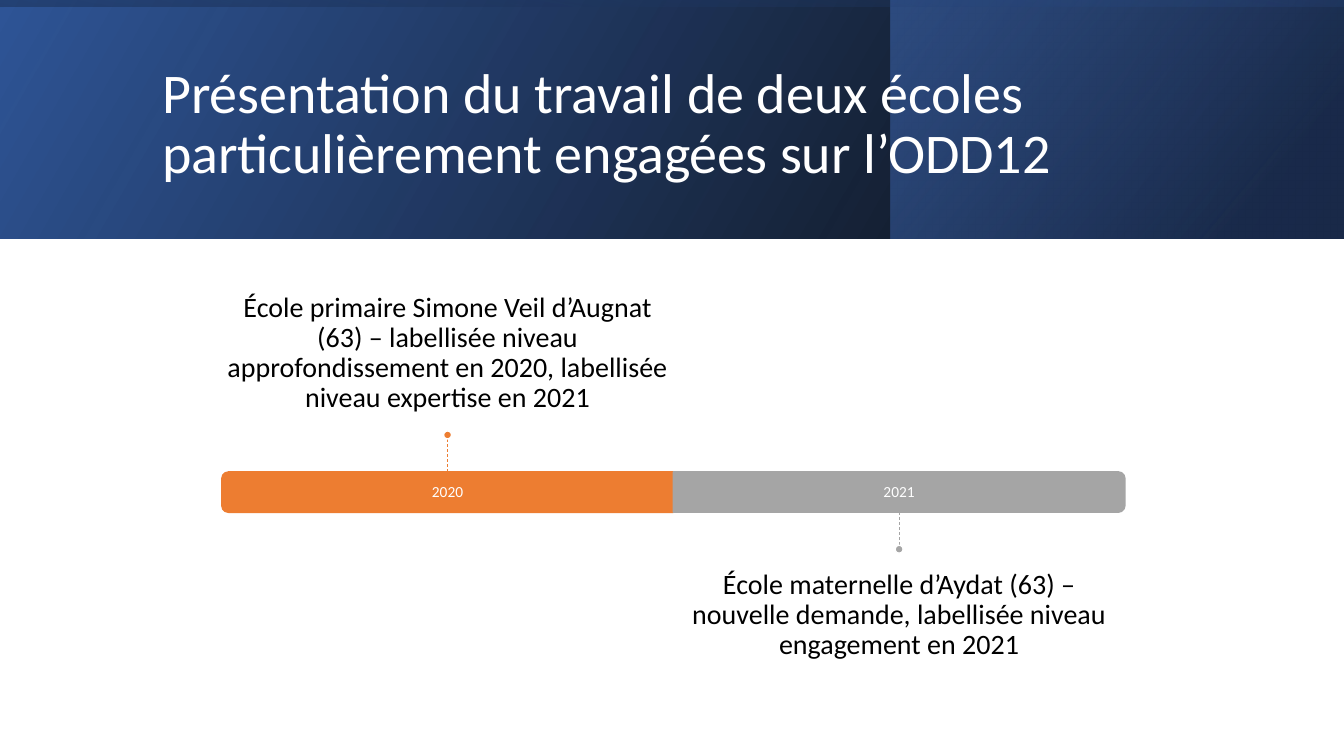
"""Build a slide presenting two schools on a two-year timeline."""
from pptx import Presentation
from pptx.dml.color import RGBColor
from pptx.enum.dml import MSO_LINE
from pptx.enum.shapes import MSO_CONNECTOR, MSO_SHAPE
from pptx.enum.text import MSO_ANCHOR, PP_ALIGN
from pptx.oxml.ns import qn
from pptx.util import Cm, Pt
from lxml import etree

RECT, BAR, DOT = MSO_SHAPE.RECTANGLE, MSO_SHAPE.ROUND_2_SAME_RECTANGLE, MSO_SHAPE.OVAL
TOP, MIDDLE, BOTTOM = MSO_ANCHOR.TOP, MSO_ANCHOR.MIDDLE, MSO_ANCHOR.BOTTOM
LEFT, CENTER = PP_ALIGN.LEFT, PP_ALIGN.CENTER
STRAIGHT, DASH = MSO_CONNECTOR.STRAIGHT, MSO_LINE.DASH

TITLE = "Présentation du travail de deux écoles particulièrement engagées sur l’ODD12"
SCHOOLS = [
    {"year": "2020", "color": "ED7D31", "side": -1, "turn": 270,
     "caption": "École primaire Simone Veil d’Augnat (63) – labellisée niveau "
                "approfondissement en 2020, labellisée niveau expertise en 2021"},
    {"year": "2021", "color": "A5A5A5", "side": 1, "turn": 90,
     "caption": "École maternelle d’Aydat (63) – nouvelle demande, "
                "labellisée niveau engagement en 2021"},
]
SLIDE_W, SLIDE_H, BANNER_H = 33.87, 19.05, 6.02
PANEL_X = 22.45
BANNER_LAYERS = [
    {"x": 0, "angle": 30, "stops": [(0, "2F5597", 100), (1, "000000", 96)]},
    {"x": PANEL_X, "angle": 40, "stops": [(0, "4472C4", 48), (0.81, "203864", 68)]},
    {"x": 0, "angle": 100, "stops": [(0.01, "2F5597", 16), (0.77, "000000", 45)]},
]
BAR_X, BAR_W, BAR_H, AXIS_Y = 5.59, 11.38, 1.02, 12.4
DOT_SIZE, CAPTION_GAP, CAPTION_H, CAPTION_PAD = 0.2, 1.54, 3.58, 0.43

deck = Presentation()
deck.slide_width, deck.slide_height = Cm(SLIDE_W), Cm(SLIDE_H)
slide = deck.slides.add_slide(deck.slide_layouts[6])


def rgb(code):
    """Turn a hex string into a colour."""
    return RGBColor.from_string(code)


def add_block(kind, x, y, w, h):
    """Add a preset shape without shadow."""
    block = slide.shapes.add_shape(kind, Cm(x), Cm(y), Cm(w), Cm(h))
    block.shadow.inherit = False
    return block


def add_solid(kind, x, y, w, h, fill, line):
    """Add a shape with a plain fill and a one-point outline."""
    block = add_block(kind, x, y, w, h)
    block.fill.solid()
    block.fill.fore_color.rgb = rgb(fill)
    block.line.color.rgb = rgb(line)
    block.line.width = Pt(1)
    return block


def add_layer(x, angle, stops):
    """Add a translucent gradient layer from x to the right edge of the banner."""
    layer = add_block(RECT, x, 0, SLIDE_W - x, BANNER_H)
    layer.line.fill.background()
    layer.fill.gradient()
    layer.fill.gradient_angle = 360 - angle
    for stop, (position, color, _) in zip(layer.fill.gradient_stops, stops):
        stop.position = position
        stop.color.rgb = rgb(color)
    tints = layer.element.spPr.iter(qn("a:srgbClr"))
    for tint, (_, _, opacity) in zip(tints, stops):
        etree.SubElement(tint, qn("a:alpha")).set("val", str(opacity * 1000))


def add_text(text, x, y, w, h, size, color, anchor, align=CENTER, pads=(0, 0, 0, 0)):
    """Add a wrapped text box; pads run left, top, right, bottom."""
    box = slide.shapes.add_textbox(Cm(x), Cm(y), Cm(w), Cm(h))
    frame, paragraph = box.text_frame, box.text_frame.paragraphs[0]
    run = paragraph.add_run()
    run.text = text
    run.font.color.rgb = rgb(color)
    left, top, right, bottom = map(Cm, pads)
    formats = [
        (frame, {"word_wrap": True, "vertical_anchor": anchor, "margin_left": left,
                 "margin_top": top, "margin_right": right, "margin_bottom": bottom}),
        (paragraph, {"alignment": align, "line_spacing": 0.9}),
        (run.font, {"name": "Calibri", "size": Pt(size)}),
    ]
    for part, values in formats:
        for key, value in values.items():
            setattr(part, key, value)


def add_stem(x, start, end, color):
    """Add a dashed vertical line."""
    stem = slide.shapes.add_connector(STRAIGHT, Cm(x), Cm(start), Cm(x), Cm(end))
    stem.line.color.rgb = rgb(color)
    stem.line.width = Pt(0.5)
    stem.line.dash_style = DASH
    etree.SubElement(stem.element.spPr, qn("a:effectLst"))


def add_school(index, year, color, side, turn, caption):
    """Add one timeline half, its caption above (-1) or below (1) the axis."""
    x = BAR_X + index * BAR_W
    middle = x + BAR_W / 2
    bar = add_solid(BAR, middle - BAR_H / 2, AXIS_Y - BAR_W / 2, BAR_H, BAR_W, color, color)
    bar.rotation = turn
    add_text(year, x, AXIS_Y - BAR_H / 2, BAR_W, BAR_H, 11, "FFFFFF", MIDDLE)

    near = AXIS_Y + side * CAPTION_GAP
    above = side < 0
    add_text(caption, x, near - CAPTION_H if above else near, BAR_W, CAPTION_H, 20, "000000",
             BOTTOM if above else TOP,
             pads=(0, 0, 0, CAPTION_PAD) if above else (0, CAPTION_PAD, 0, 0))
    add_stem(middle, AXIS_Y + side * BAR_H / 2, near - side * DOT_SIZE, color)
    add_solid(DOT, middle - DOT_SIZE / 2, near if above else near - DOT_SIZE,
              DOT_SIZE, DOT_SIZE, color, "FFFFFF")


for banner_layer in BANNER_LAYERS:
    add_layer(**banner_layer)
add_text(TITLE, 3.84, 0.97, 27, 4.37, 40, "FFFFFF", MIDDLE, LEFT, (0.25, 0.13, 0.25, 0.13))
for order, school in enumerate(SCHOOLS):
    add_school(order, **school)
deck.save("out.pptx")
